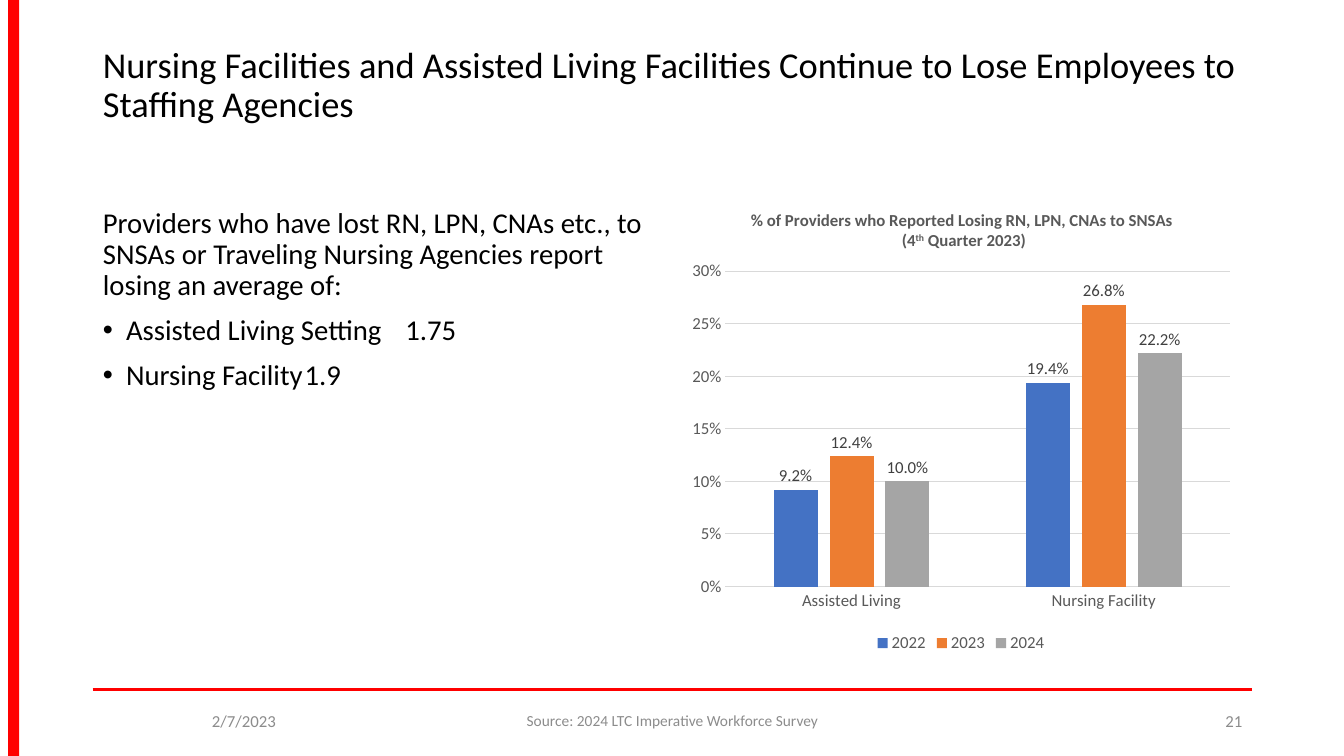
from lxml import etree
from pptx import Presentation
from pptx.chart.data import CategoryChartData
from pptx.dml.color import RGBColor
from pptx.enum.chart import XL_CHART_TYPE, XL_LABEL_POSITION, XL_LEGEND_POSITION, XL_TICK_MARK
from pptx.enum.shapes import MSO_CONNECTOR, MSO_SHAPE
from pptx.enum.text import MSO_ANCHOR, MSO_AUTO_SIZE, PP_ALIGN
from pptx.oxml.ns import qn
from pptx.util import Inches, Pt

CLUSTERED = XL_CHART_TYPE.COLUMN_CLUSTERED
OUTSIDE_END = XL_LABEL_POSITION.OUTSIDE_END
LEGEND_BOTTOM = XL_LEGEND_POSITION.BOTTOM
NO_TICK = XL_TICK_MARK.NONE
STRAIGHT = MSO_CONNECTOR.STRAIGHT
RECTANGLE = MSO_SHAPE.RECTANGLE
MIDDLE, TOP = MSO_ANCHOR.MIDDLE, MSO_ANCHOR.TOP
NO_AUTOFIT = MSO_AUTO_SIZE.NONE
LEFT, CENTER, RIGHT = PP_ALIGN.LEFT, PP_ALIGN.CENTER, PP_ALIGN.RIGHT

FONT = "Calibri"
BLACK = RGBColor(0x00, 0x00, 0x00)
RED = RGBColor(0xFF, 0x00, 0x00)
FOOTER_GRAY = RGBColor(0x8C, 0x8C, 0x8C)
AXIS_GRAY = RGBColor(0x59, 0x59, 0x59)
LABEL_GRAY = RGBColor(0x40, 0x40, 0x40)
GRID_GRAY = RGBColor(0xD9, 0xD9, 0xD9)
BLUE = RGBColor(0x44, 0x72, 0xC4)
ORANGE = RGBColor(0xED, 0x7D, 0x31)
GRAY = RGBColor(0xA5, 0xA5, 0xA5)

# Content
TITLE = ("Nursing Facilities and Assisted Living Facilities Continue to "
         "Lose Employees to Staffing Agencies")
INTRO = ("Providers who have lost RN, LPN, CNAs etc., to SNSAs or Traveling "
         "Nursing Agencies report losing an average of:")
AVERAGES = ["Assisted Living Setting \t1.75", "Nursing Facility\t1.9"]
CHART_TITLE = [
    [("% of Providers who Reported Losing RN, LPN, CNAs to SNSAs ", False)],
    [("(4", False), ("th", True), (" Quarter 2023)", False)],  # True: superscript
]
SETTINGS = ["Assisted Living", "Nursing Facility"]
YEARS = [("2022", (0.092, 0.194), BLUE),
         ("2023", (0.124, 0.268), ORANGE),
         ("2024", (0.1, 0.222), GRAY)]

# Page frame, in inches
WIDTH, HEIGHT = 13.33, 7.5
MARGIN, CONTENT_WIDTH = 0.92, 11.5
RIGHT_EDGE = MARGIN + CONTENT_WIDTH
RULE_Y, FOOTER_Y, FOOTER_HEIGHT = 6.84, 6.95, 0.4
SIDE_FOOTER, MID_FOOTER = 3, 4.5
FOOTERS = [
    ("2/7/2023", MARGIN, SIDE_FOOTER, 12, CENTER),
    ("Source: 2024 LTC Imperative Workforce Survey",
     MARGIN + (CONTENT_WIDTH - MID_FOOTER) / 2, MID_FOOTER, 11, CENTER),
    ("21", RIGHT_EDGE - SIDE_FOOTER, SIDE_FOOTER, 12, RIGHT),
]
# Shares of the chart's size
PLOT_LAYOUT = {"x": 0.08, "y": 0.18, "w": 0.9, "h": 0.67}
TITLE_LAYOUT = {"x": 0.12, "y": 0.04}


def box(*lengths):
    return [Inches(length) for length in lengths]


def style(font, size, color, bold=False):
    font.name, font.size, font.bold = FONT, Pt(size), bold
    font.color.rgb = color


def fill_placeholder(shape, place, lines, size, anchor):
    shape.left, shape.top, shape.width, shape.height = box(*place)
    frame = shape.text_frame
    frame.text = "\n".join(lines)
    frame.word_wrap, frame.auto_size = True, NO_AUTOFIT
    frame.vertical_anchor = anchor
    for paragraph in frame.paragraphs:
        paragraph.alignment, paragraph.line_spacing = LEFT, 0.9
        for run in paragraph.runs:
            style(run.font, size, BLACK)
    return frame.paragraphs


def set_bullet(paragraph, char=None, indent=0):
    props = paragraph._p.get_or_add_pPr()
    props.set("marL", str(Inches(indent)))
    props.set("indent", str(-Inches(indent)))
    if char:
        etree.SubElement(props, qn("a:buFont")).set("typeface", "Arial")
        etree.SubElement(props, qn("a:buChar")).set("char", char)
    else:
        etree.SubElement(props, qn("a:buNone"))


def set_layout(parent, before, shares, inner=False):
    for old in parent.findall(qn("c:layout")):
        parent.remove(old)
    layout = etree.Element(qn("c:layout"))
    manual = etree.SubElement(layout, qn("c:manualLayout"))
    settings = [("layoutTarget", "inner")] if inner else []
    settings += [(f"{key}Mode", "edge") for key in ("x", "y")]
    settings += shares.items()
    for tag, value in settings:
        etree.SubElement(manual, qn(f"c:{tag}")).set("val", str(value))
    parent.insert(before, layout)


prs = Presentation()
prs.slide_width, prs.slide_height = box(WIDTH, HEIGHT)
slide = prs.slides.add_slide(prs.slide_layouts[1])
shapes = slide.shapes

# Red side bar and footer rule
side_bar = shapes.add_shape(RECTANGLE, *box(0.08, 0, 0.11, HEIGHT))
side_bar.shadow.inherit = False
side_bar.fill.solid()
side_bar.fill.fore_color.rgb = RED
side_bar.line.fill.background()
rule = shapes.add_connector(STRAIGHT, *box(MARGIN, RULE_Y, RIGHT_EDGE, RULE_Y))
rule.line.color.rgb, rule.line.width = RED, Pt(2)
etree.SubElement(rule._element.spPr, qn("a:effectLst"))

# Title and list
fill_placeholder(shapes.title, (MARGIN, 0.13, CONTENT_WIDTH, 1.45), [TITLE], 26, MIDDLE)
intro, *averages = fill_placeholder(
    slide.placeholders[1], (MARGIN, 2.02, 5.67, 4.76), [INTRO, *AVERAGES], 20.5, TOP)
intro.space_before = Pt(0)
set_bullet(intro)
for average in averages:
    average.space_before = Pt(10)
    set_bullet(average, "•", 0.23)

# Chart
chart_data = CategoryChartData(number_format="0.0%")
chart_data.categories = SETTINGS
for year, shares, _ in YEARS:
    chart_data.add_series(year, shares)
chart = shapes.add_chart(CLUSTERED, *box(6.75, 1.85, 5.56, 4.67), chart_data).chart
style(chart.font, 12, AXIS_GRAY)

heading = chart.chart_title.text_frame
for number, parts in enumerate(CHART_TITLE):
    line = heading.add_paragraph() if number else heading.paragraphs[0]
    for text, raised in parts:
        run = line.add_run()
        run.text = text
        style(run.font, 12, AXIS_GRAY, bold=True)
        if raised:
            run.font._element.set("baseline", "30000")
chart.chart_title.include_in_layout = False
set_layout(chart.chart_title._element, 1, TITLE_LAYOUT)
set_layout(chart._chartSpace.chart.plotArea, 0, PLOT_LAYOUT, inner=True)

plot = chart.plots[0]
plot.gap_width, plot.overlap, plot.vary_by_categories = 219, -27, False
for series, (_, _, color) in zip(plot.series, YEARS):
    series.format.fill.solid()
    series.format.fill.fore_color.rgb = color
    labels = series.data_labels
    labels.show_value, labels.position = True, OUTSIDE_END
    labels.number_format, labels.number_format_is_linked = "0.0%", False
    style(labels.font, 12, LABEL_GRAY)

value_axis, category_axis = chart.value_axis, chart.category_axis
for axis in (value_axis, category_axis):
    axis.major_tick_mark = axis.minor_tick_mark = NO_TICK
    style(axis.tick_labels.font, 12, AXIS_GRAY)
value_axis.minimum_scale, value_axis.maximum_scale, value_axis.major_unit = 0, 0.3, 0.05
value_axis.tick_labels.number_format = "0%"
value_axis.tick_labels.number_format_is_linked = False
value_axis.format.line.fill.background()
for line_format in (value_axis.major_gridlines.format.line, category_axis.format.line):
    line_format.color.rgb, line_format.width = GRID_GRAY, Pt(0.75)

chart.has_legend = True
chart.legend.position, chart.legend.include_in_layout = LEGEND_BOTTOM, False
style(chart.legend.font, 12, AXIS_GRAY)

# Footer
for text, left, width, size, alignment in FOOTERS:
    frame = shapes.add_textbox(*box(left, FOOTER_Y, width, FOOTER_HEIGHT)).text_frame
    frame.word_wrap, frame.vertical_anchor = True, MIDDLE
    frame.text = text
    frame.paragraphs[0].alignment = alignment
    style(frame.paragraphs[0].runs[0].font, size, FOOTER_GRAY)

prs.save("out.pptx")
